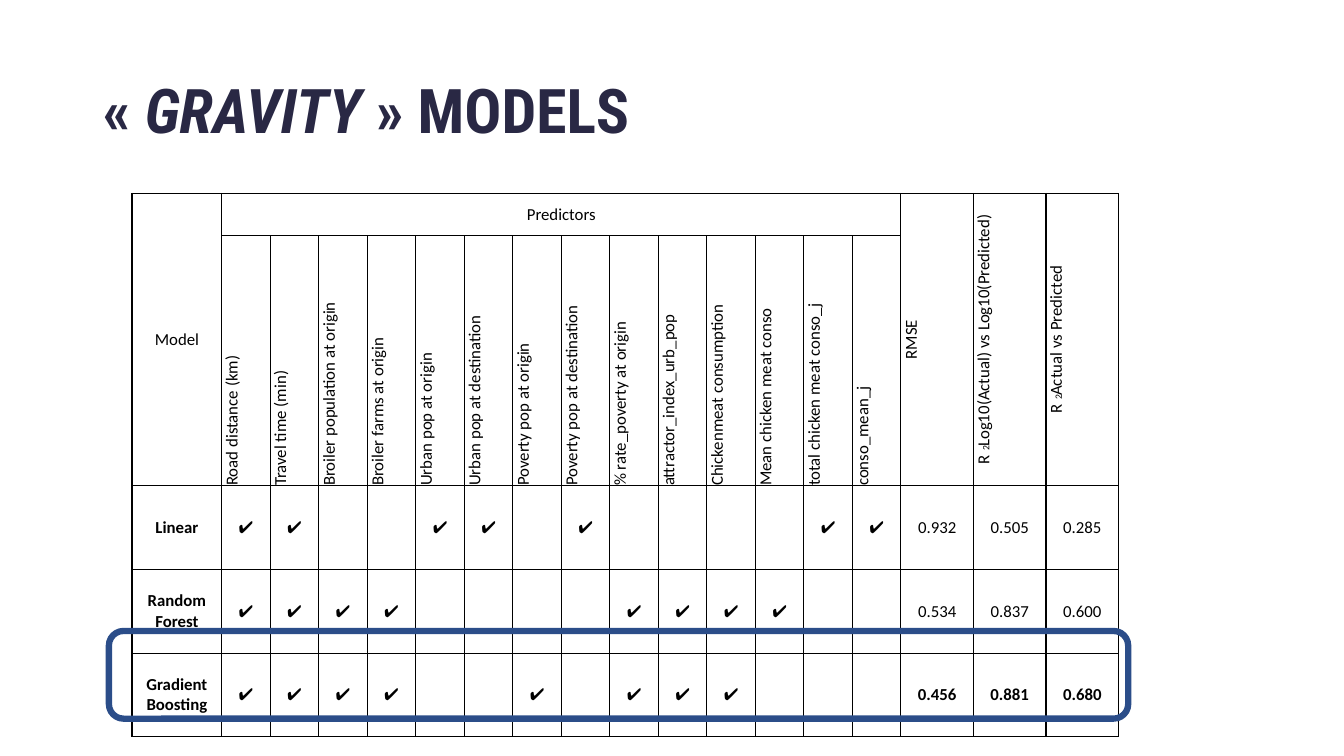
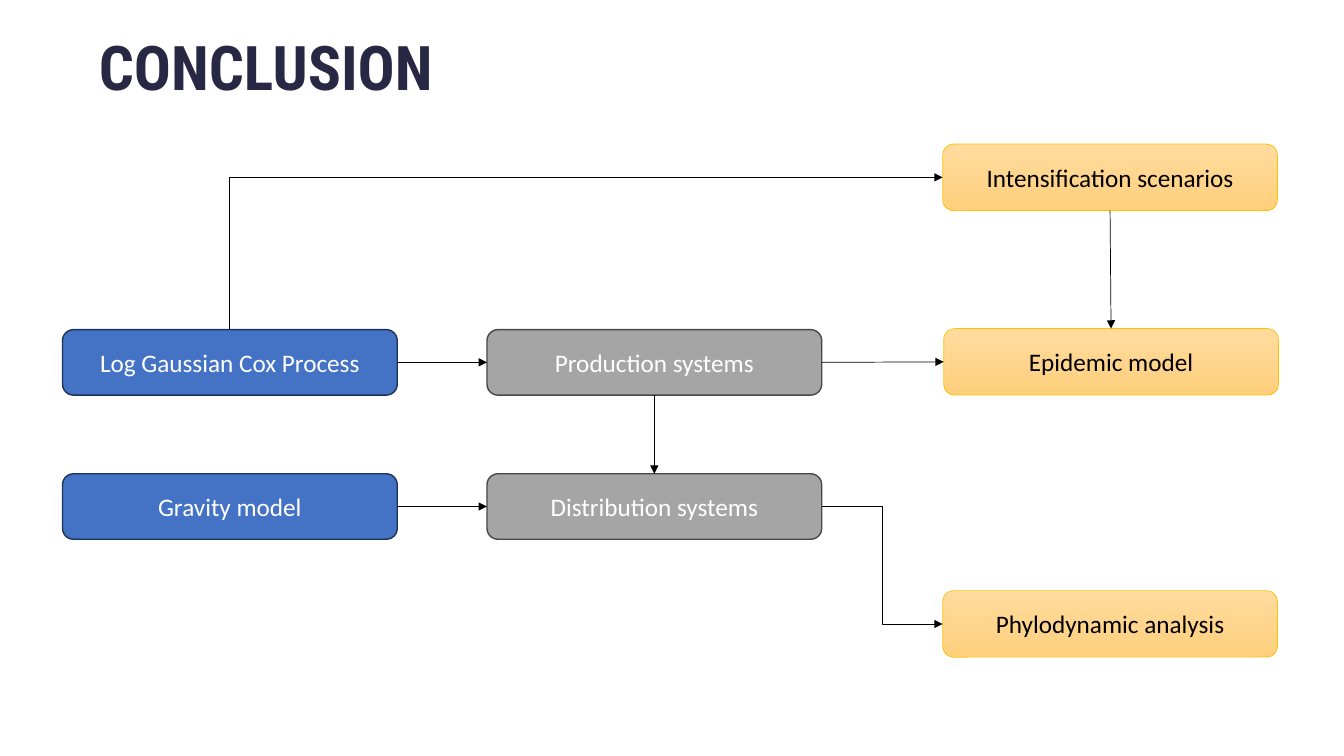
from lxml.etree import SubElement
from pptx import Presentation
from pptx.dml.color import RGBColor
from pptx.enum.shapes import MSO_CONNECTOR, MSO_SHAPE
from pptx.enum.text import MSO_ANCHOR, PP_ALIGN
from pptx.oxml import parse_xml
from pptx.oxml.ns import nsdecls, qn
from pptx.util import Inches, Pt

NAVY = RGBColor(0x29, 0x28, 0x44)
BLACK = RGBColor(0, 0, 0)
WHITE = RGBColor(0xFF, 0xFF, 0xFF)
HIGHLIGHT = RGBColor(0x2B, 0x4D, 0x89)
BLUE = RGBColor(0x44, 0x72, 0xC4)
BLUE_EDGE = RGBColor(0x1E, 0x32, 0x56)
GREY = RGBColor(0xA5, 0xA5, 0xA5)
GREY_EDGE = RGBColor(0x48, 0x48, 0x48)
GOLD_TOP = RGBColor(0xFF, 0xDB, 0x9E)
GOLD_BOTTOM = RGBColor(0xFF, 0xD0, 0x7C)
GOLD_EDGE = RGBColor(0xFF, 0xC0, 0x00)

TITLE_FONT = "Roboto Condensed"
BODY_FONT = "Calibri"
TITLE_ONLY = 5
TOP, LEFT, BOTTOM, RIGHT = range(4)

PREDICTORS = [
    "Road distance (km)", "Travel time (min)", "Broiler population at origin",
    "Broiler farms at origin", "Urban pop at origin", "Urban pop at destination",
    "Poverty pop at origin", "Poverty pop at destination", "% rate_poverty at origin",
    "attractor_index_urb_pop", "Chickenmeat consumption", "Mean chicken meat conso",
    "total chicken meat conso_j", "conso_mean_j",
]
SCORES = [
    [("RMSE", False)],
    [("R", False), ("2", True), (" Log10(Actual) vs Log10(Predicted)", False)],
    [("R", False), ("2", True), (" Actual vs Predicted", False)],
]
MODELS = [
    ("Linear", "✔✔--✔✔-✔----✔✔", ["0.932", "0.505", "0.285"], False),
    ("Random Forest", "✔✔✔✔----✔✔✔✔--", ["0.534", "0.837", "0.600"], False),
    ("Gradient Boosting", "✔✔✔✔--✔-✔✔✔---", ["0.456", "0.881", "0.680"], True),
]
FIRST_SCORE = 1 + len(PREDICTORS)
MODEL_WIDTH, SCORE_WIDTH, TABLE_WIDTH = 0.89, 0.72, 9.79
ROW_HEIGHTS = [0.42, 2.2] + [0.83] * len(MODELS)


def add_run(paragraph, text, size, color, font=BODY_FONT, bold=False, italic=False):
    """Append a formatted run and return it."""
    run = paragraph.add_run()
    run.text = text
    run.font.name = font
    run.font.size = Pt(size)
    run.font.bold = bold
    run.font.italic = italic
    run.font.color.rgb = color
    return run


def add_titled_slide(prs, box, pieces):
    """Add a title-only slide whose title is made of (text, italic) pieces."""
    slide = prs.slides.add_slide(prs.slide_layouts[TITLE_ONLY])
    title = slide.shapes.title
    title.left, title.top, title.width, title.height = map(Inches, box)
    title.text_frame.vertical_anchor = MSO_ANCHOR.MIDDLE
    paragraph = title.text_frame.paragraphs[0]
    paragraph.alignment = PP_ALIGN.LEFT
    paragraph.line_spacing = 0.9
    for text, italic in pieces:
        add_run(paragraph, text, 44, NAVY, TITLE_FONT, True, italic)
    return slide


def style_cell(cell):
    """Clear the fill and margins of a cell and draw its black borders."""
    cell.fill.background()
    cell.vertical_anchor = MSO_ANCHOR.MIDDLE
    cell.margin_left = cell.margin_right = cell.margin_top = cell.margin_bottom = 0
    properties = cell._tc.get_or_add_tcPr()
    for position, side in enumerate("LRTB"):
        properties.insert(position, parse_xml(
            f'<a:ln{side} {nsdecls("a")} w="{Pt(1)}"><a:solidFill>'
            f'<a:srgbClr val="{BLACK}"/></a:solidFill></a:ln{side}>'))


def write_cell(cell, pieces, bold=False, upright=False, align=PP_ALIGN.CENTER):
    """Write (text, superscript) pieces into a cell."""
    if upright:
        cell._tc.get_or_add_tcPr().set("vert", "vert270")
    paragraph = cell.text_frame.paragraphs[0]
    paragraph.alignment = align
    for text, superscript in pieces:
        run = add_run(paragraph, text, 12, BLACK, bold=bold)
        if superscript:
            run._r.get_or_add_rPr().set("baseline", "30000")


def write_headers(table):
    """Merge and fill the two header rows."""
    table.cell(0, 0).merge(table.cell(1, 0))
    write_cell(table.cell(0, 0), [("Model", False)])
    table.cell(0, 1).merge(table.cell(0, FIRST_SCORE - 1))
    write_cell(table.cell(0, 1), [("Predictors", False)])
    for column, predictor in enumerate(PREDICTORS, 1):
        write_cell(table.cell(1, column), [(predictor, False)],
                   upright=True, align=PP_ALIGN.LEFT)
    for column, score in enumerate(SCORES, FIRST_SCORE):
        table.cell(0, column).merge(table.cell(1, column))
        write_cell(table.cell(0, column), score, upright=True)


def add_model_table(slide):
    """Add the table of predictors and scores for each model."""
    columns = FIRST_SCORE + len(SCORES)
    table = slide.shapes.add_table(
        len(ROW_HEIGHTS), columns, Inches(1.31), Inches(1.92),
        Inches(TABLE_WIDTH), Inches(sum(ROW_HEIGHTS))).table
    table.first_row = table.horz_banding = False
    predictor_width = (TABLE_WIDTH - MODEL_WIDTH
                       - SCORE_WIDTH * len(SCORES)) / len(PREDICTORS)
    widths = ([MODEL_WIDTH] + [predictor_width] * len(PREDICTORS)
              + [SCORE_WIDTH] * len(SCORES))
    for column, width in zip(table.columns, widths):
        column.width = Inches(width)
    for row, height in zip(table.rows, ROW_HEIGHTS):
        row.height = Inches(height)
    for cell in table.iter_cells():
        style_cell(cell)
    write_headers(table)
    for row, (model, marks, scores, best) in enumerate(MODELS, 2):
        write_cell(table.cell(row, 0), [(model, False)], bold=True)
        for column, mark in enumerate(marks, 1):
            if mark == "✔":
                write_cell(table.cell(row, column), [(mark, False)])
        for column, score in enumerate(scores, FIRST_SCORE):
            write_cell(table.cell(row, column), [(score, False)], bold=best)


def add_rounded(slide, box, edge, weight):
    """Add an outlined rounded rectangle without fill or shadow."""
    rounded = slide.shapes.add_shape(MSO_SHAPE.ROUNDED_RECTANGLE, *map(Inches, box))
    rounded.shadow.inherit = False
    rounded.fill.background()
    rounded.line.color.rgb = edge
    rounded.line.width = Pt(weight)
    return rounded


def add_step(slide, label, left, top, fill, edge):
    """Add a labelled step; a pair of fill colours makes a gradient."""
    shaded = isinstance(fill, list)
    step = add_rounded(slide, (left, top, 3.32, 0.66 if shaded else 0.65),
                       edge, 0.5 if shaded else 1)
    if shaded:
        step.fill.gradient()
        step.fill.gradient_angle = 270
        for stop, color in zip(step.fill.gradient_stops, fill):
            stop.color.rgb = color
    else:
        step.fill.solid()
        step.fill.fore_color.rgb = fill
    step.text_frame.word_wrap = True
    step.text_frame.vertical_anchor = MSO_ANCHOR.MIDDLE
    paragraph = step.text_frame.paragraphs[0]
    paragraph.alignment = PP_ALIGN.CENTER
    add_run(paragraph, label, 18, BLACK if shaded else WHITE)
    return step


def add_link(slide, start, start_side, end, end_side,
             route=MSO_CONNECTOR.STRAIGHT, arrow="tailEnd"):
    """Join two steps by a thin black arrow and return it."""
    link = slide.shapes.add_connector(route, 0, 0, 0, 0)
    link.begin_connect(start, start_side)
    link.end_connect(end, end_side)
    link.line.color.rgb = BLACK
    link.line.width = Pt(0.5)
    properties = link._element.spPr
    SubElement(properties.find(qn("a:ln")), qn(f"a:{arrow}"), type="triangle")
    SubElement(properties, qn("a:effectLst"))
    return link


def build_models(prs):
    """Build the slide comparing the gravity models."""
    slide = add_titled_slide(prs, (0.92, 0.4, 11.5, 1.45), [
        ("« ", False), ("GRAVITY", True), (" » MODELS", False)])
    add_model_table(slide)
    add_rounded(slide, (1.08, 6.26, 10.11, 0.87), HIGHLIGHT, 4.5)


def build_conclusion(prs):
    """Build the concluding flow diagram."""
    slide = add_titled_slide(prs, (0.88, 0.23, 11.57, 0.93), [("CONCLUSION", False)])
    methods = (BLUE, BLUE_EDGE)
    systems = (GREY, GREY_EDGE)
    outcomes = ([GOLD_TOP, GOLD_BOTTOM], GOLD_EDGE)
    production = add_step(slide, "Production systems", 4.83, 3.27, *systems)
    distribution = add_step(slide, "Distribution systems", 4.83, 4.7, *systems)
    epidemic = add_step(slide, "Epidemic model", 9.36, 3.26, *outcomes)
    phylodynamic = add_step(slide, "Phylodynamic analysis", 9.35, 5.86, *outcomes)
    scenarios = add_step(slide, "Intensification scenarios", 9.35, 1.43, *outcomes)
    cox = add_step(slide, "Log Gaussian Cox Process", 0.62, 3.27, *methods)
    gravity = add_step(slide, "Gravity model", 0.62, 4.7, *methods)

    add_link(slide, cox, RIGHT, production, LEFT)
    add_link(slide, gravity, RIGHT, distribution, LEFT)
    add_link(slide, production, BOTTOM, distribution, TOP)
    add_link(slide, distribution, RIGHT, phylodynamic, LEFT, MSO_CONNECTOR.ELBOW)
    add_link(slide, scenarios, BOTTOM, epidemic, TOP)
    corner = add_link(slide, scenarios, LEFT, cox, TOP, MSO_CONNECTOR.ELBOW, "headEnd")
    corner._element.spPr.find(qn("a:prstGeom")).set("prst", "bentConnector2")
    add_link(slide, production, RIGHT, epidemic, LEFT)


def main():
    """Build and save the presentation."""
    prs = Presentation()
    prs.slide_width, prs.slide_height = Inches(13.33), Inches(7.5)
    build_models(prs)
    build_conclusion(prs)
    prs.save("out.pptx")


if __name__ == "__main__":
    main()
